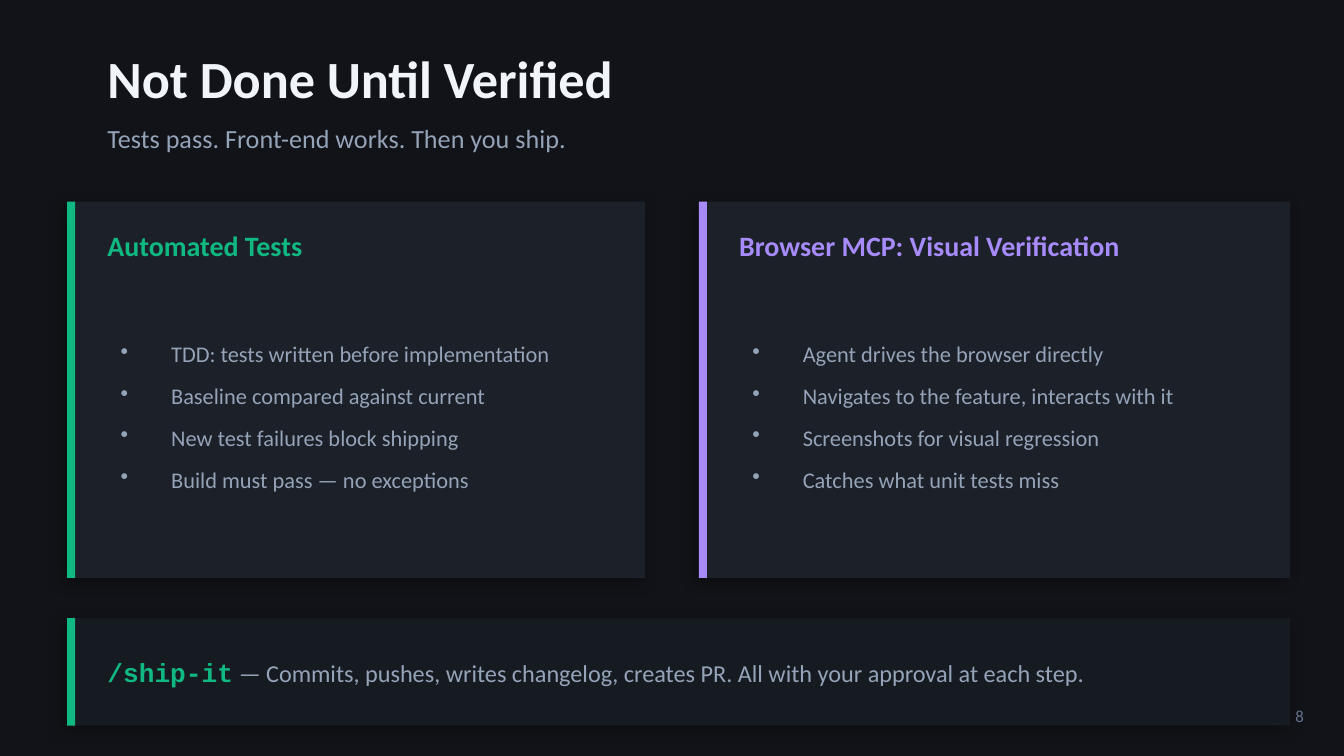
from lxml.etree import SubElement
from pptx import Presentation
from pptx.dml.color import RGBColor
from pptx.enum.shapes import MSO_SHAPE
from pptx.enum.text import MSO_ANCHOR, PP_ALIGN
from pptx.oxml.ns import qn
from pptx.util import Pt

PX = 4572  # 200 px to the inch
COLORS = {
    "background": "111318",
    "card": "1C2028",
    "banner": "161B22",
    "green": "10B981",
    "purple": "A78BFA",
    "title": "F1F5F9",
    "body": "94A3B8",
    "number": "64748B",
    "shadow": "000000",
}
BAR_W = 12
PAD = 60
BULLET_INDENT = 75

TITLE = {"size": 28, "bold": True, "color": "title"}
SUBTITLE = {"size": 14, "color": "body"}
HEADING = {"size": 15, "bold": True}
BULLET = {"size": 12, "color": "body"}
COMMAND = {"name": "Courier New", "size": 14, "bold": True, "color": "green"}
SUMMARY = {"size": 13, "color": "body"}
NUMBER = {"size": 9, "color": "number"}

CARDS = [
    ((100, 300, 860, 560), "green", "Automated Tests", [
        "TDD: tests written before implementation",
        "Baseline compared against current",
        "New test failures block shipping",
        "Build must pass — no exceptions",
    ]),
    ((1040, 300, 880, 560), "purple", "Browser MCP: Visual Verification", [
        "Agent drives the browser directly",
        "Navigates to the feature, interacts with it",
        "Screenshots for visual regression",
        "Catches what unit tests miss",
    ]),
]


def rgb(name):
    return RGBColor.from_string(COLORS[name])


def emu(box):
    return [v * PX for v in box]


def set_font(font, style):
    values = {"name": "Calibri", "bold": False, **style}
    font.color.rgb = rgb(values.pop("color"))
    values["size"] = Pt(values["size"])
    for key, value in values.items():
        setattr(font, key, value)


def add_rect(s, box, color):
    sp = s.shapes.add_shape(MSO_SHAPE.RECTANGLE, *emu(box))
    sp.shadow.inherit = False
    sp.fill.solid()
    sp.fill.fore_color.rgb = rgb(color)
    sp.line.fill.background()
    return sp


def add_shadow(sp):
    effects = sp._element.spPr.find(qn("a:effectLst"))
    shadow = SubElement(effects, qn("a:outerShdw"), blurRad=str(Pt(8)),
                        dist=str(Pt(3)), dir=str(135 * 60000),
                        algn="bl", rotWithShape="0")
    color = SubElement(shadow, qn("a:srgbClr"), val=COLORS["shadow"])
    SubElement(color, qn("a:alpha"), val="30000")


def add_text(s, box, paragraphs, inset=False):
    """Each paragraph is a list of (text, style) runs."""
    tf = s.shapes.add_textbox(*emu(box)).text_frame
    tf.word_wrap = True
    tf.vertical_anchor = MSO_ANCHOR.MIDDLE
    if not inset:
        for side in ("left", "top", "right", "bottom"):
            setattr(tf, f"margin_{side}", 0)
    for i, runs in enumerate(paragraphs):
        p = tf.add_paragraph() if i else tf.paragraphs[0]
        for text, style in runs:
            r = p.add_run()
            r.text = text
            set_font(r.font, style)
    return tf


def add_bullets(s, box, items):
    tf = add_text(s, box, [[(item, BULLET)] for item in items], inset=True)
    for p in tf.paragraphs:
        p.space_after = Pt(8)
        pPr = p._p.get_or_add_pPr()
        pPr.set("marL", str(BULLET_INDENT * PX))
        pPr.set("indent", str(-BULLET_INDENT * PX))
        SubElement(pPr, qn("a:buSzPct"), val="100000")
        SubElement(pPr, qn("a:buChar"), char="•")


def add_panel(s, box, fill, accent):
    """Shadowed panel with an accent bar along its left edge."""
    x, y, _, h = box
    add_shadow(add_rect(s, box, fill))
    add_rect(s, (x, y, BAR_W, h), accent)


def add_header(s, box):
    x, y, w, h = box
    title_h = 110
    add_text(s, (x, y, w, title_h), [[("Not Done Until Verified", TITLE)]])
    add_text(s, (x, y + title_h, w, h - title_h),
             [[("Tests pass. Front-end works. Then you ship.", SUBTITLE)]])


def add_card(s, box, accent, heading, items):
    x, y, w, h = box
    add_panel(s, box, "card", accent)
    left, width = x + PAD, w - PAD - 40
    add_text(s, (left, y + 30, width, 70),
             [[(heading, {**HEADING, "color": accent})]])
    add_bullets(s, (left, y + 140, width, h - 200), items)


def add_banner(s, box):
    x, y, w, h = box
    add_panel(s, box, "banner", "green")
    add_text(s, (x + PAD, y, w - 2 * PAD, h), [[
        ("/ship-it", COMMAND),
        (" — Commits, pushes, writes changelog, creates PR. "
         "All with your approval at each step.", SUMMARY),
    ]])


def add_page_number(s, box):
    tf = add_text(s, box, [[("8", NUMBER)]], inset=True)
    tf.paragraphs[0].alignment = PP_ALIGN.RIGHT


def main():
    prs = Presentation()
    prs.slide_width, prs.slide_height = emu((2000, 1125))
    s = prs.slides.add_slide(prs.slide_layouts[6])
    s.background.fill.solid()
    s.background.fill.fore_color.rgb = rgb("background")

    add_page_number(s, (1860, 1030, 100, 70))
    add_header(s, (160, 60, 1600, 180))
    for card in CARDS:
        add_card(s, *card)
    add_banner(s, (100, 920, 1820, 160))
    prs.save("out.pptx")


if __name__ == "__main__":
    main()
